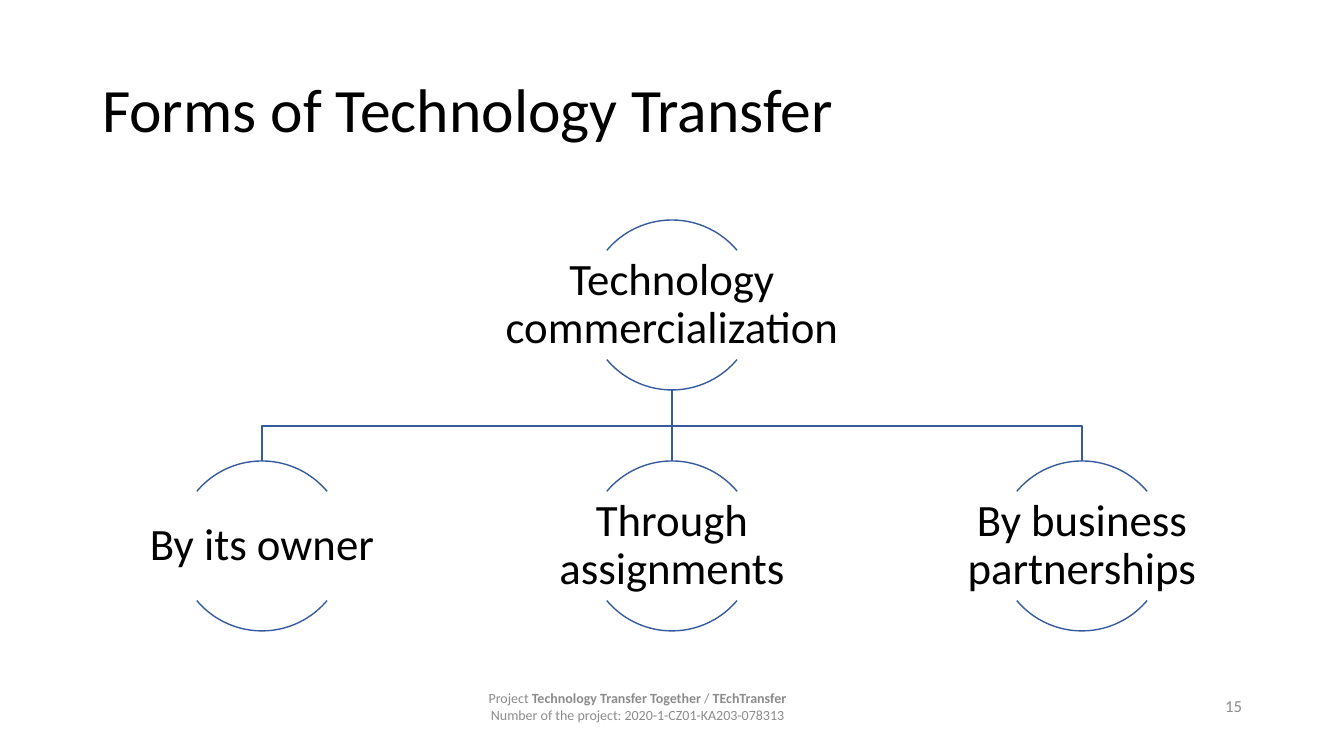
from pptx import Presentation
from pptx.dml.color import RGBColor
from pptx.enum.shapes import MSO_CONNECTOR, MSO_SHAPE
from pptx.enum.text import MSO_ANCHOR as ANCHOR, MSO_AUTO_SIZE as FIT, PP_ALIGN as ALIGN
from pptx.oxml.ns import qn
from pptx.util import Emu, Pt

TITLE = "Forms of Technology Transfer"
ROOT = "Technology commercialization"
BRANCHES = ["By its owner", "Through assignments", "By business partnerships"]
FOOTER = [
    [("Project ", False), ("Technology Transfer Together", True),
     (" / ", False), ("TEchTransfer", True)],
    [("Number of the project: 2020-1-CZ01-KA203-078313", False)],
]
NUMBER = "15"
COLORS = {"text": "000000", "line": "365B9D", "muted": "8C8C8C"}
FONT = "Calibri"

# Lengths in px
EMU_PER_PX = 914400 / 100.8
MIDDLE, STEP = 672, 410
DIAMETER, ROOT_TOP, BRANCH_TOP = 170, 220, 461
LABEL_WIDTH, LABEL_HEIGHT = 338, 108
ARCS = [(132, 192), (24, 84)]  # start and end, in 100000ths of a 60000th degree


def px(*lengths):
    return [Emu(round(length * EMU_PER_PX)) for length in lengths]


def color(name):
    return RGBColor.from_string(COLORS[name])


def style(para, size, name, align):
    para.alignment = align
    para.font.name = FONT
    para.font.size = Pt(size)
    para.font.color.rgb = color(name)


def add_text(page, place, paras, size, name, align, inset=None):
    """Add a middle-anchored box; each paragraph is a list of (text, bold)."""
    frame = page.shapes.add_textbox(*px(*place)).text_frame
    frame.word_wrap = True
    frame.vertical_anchor = ANCHOR.MIDDLE
    if inset is not None:
        frame.margin_left = frame.margin_right = px(inset)[0]
        frame.margin_top = frame.margin_bottom = px(inset)[0]
    for index, spans in enumerate(paras):
        para = frame.add_paragraph() if index else frame.paragraphs[0]
        style(para, size, name, align)
        for text, bold in spans:
            span = para.add_run()
            span.text = text
            span.font.bold = bold
    return frame


def outline(shape):
    shape.line.color.rgb = color("line")
    shape.line.width = Pt(1)


def add_node(page, text, center, top):
    """Draw the upper and lower arcs of a circle with a label between them."""
    for angles in ARCS:
        arc = page.shapes.add_shape(
            MSO_SHAPE.ARC, *px(center - DIAMETER / 2, top, DIAMETER, DIAMETER))
        arc.adjustments[0], arc.adjustments[1] = angles
        arc.fill.background()
        arc.shadow.inherit = False
        outline(arc)
    label_top = top + (DIAMETER - LABEL_HEIGHT) / 2
    place = (center - LABEL_WIDTH / 2, label_top, LABEL_WIDTH, LABEL_HEIGHT)
    frame = add_text(page, place, [[(text, False)]], 32, "text", ALIGN.CENTER, 2)
    frame.paragraphs[0].line_spacing = 0.9


def add_link(page, center):
    """Join the root circle to the branch circle at this center."""
    start, end = ROOT_TOP + DIAMETER, BRANCH_TOP
    if center == MIDDLE:
        link = page.shapes.add_connector(
            MSO_CONNECTOR.STRAIGHT, *px(MIDDLE, start, MIDDLE, end))
        link._element.spPr.append(link._element.makeelement(qn("a:effectLst"), {}))
    else:
        bend = (start + end) / 2
        builder = page.shapes.build_freeform(MIDDLE, start, scale=EMU_PER_PX)
        builder.add_line_segments(
            [(MIDDLE, bend), (center, bend), (center, end)], close=False)
        link = builder.convert_to_shape()
        link.fill.background()
        link.shadow.inherit = False
    outline(link)


def main():
    deck = Presentation()
    deck.slide_width, deck.slide_height = px(1344, 756)
    page = deck.slides.add_slide(deck.slide_layouts[5])

    title = page.shapes.title
    title.left, title.top, title.width, title.height = px(92, 40, 1159, 146)
    title.text_frame.text = TITLE
    title.text_frame.auto_size = FIT.NONE
    title.text_frame.vertical_anchor = ANCHOR.MIDDLE
    heading = title.text_frame.paragraphs[0]
    style(heading, 44, "text", ALIGN.LEFT)
    heading.line_spacing = 0.9

    add_text(page, (1162, 686, 90, 40), [[(NUMBER, False)]], 12, "muted", ALIGN.RIGHT)
    add_text(page, (445, 687, 385, 39), FOOTER, 10, "muted", ALIGN.CENTER)

    centers = [MIDDLE + (index - 1) * STEP for index in range(len(BRANCHES))]
    for center in centers:
        add_link(page, center)
    add_node(page, ROOT, MIDDLE, ROOT_TOP)
    for text, center in zip(BRANCHES, centers):
        add_node(page, text, center, BRANCH_TOP)

    deck.save("out.pptx")


if __name__ == "__main__":
    main()
